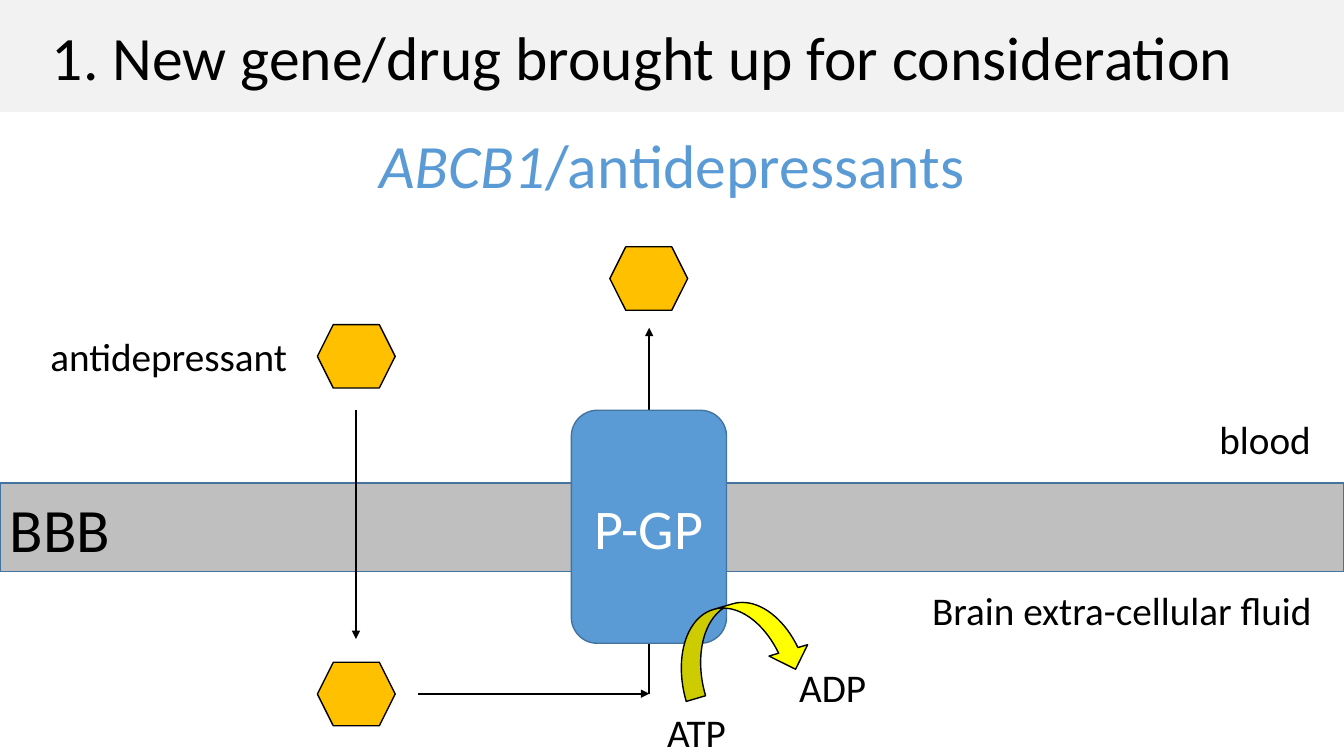
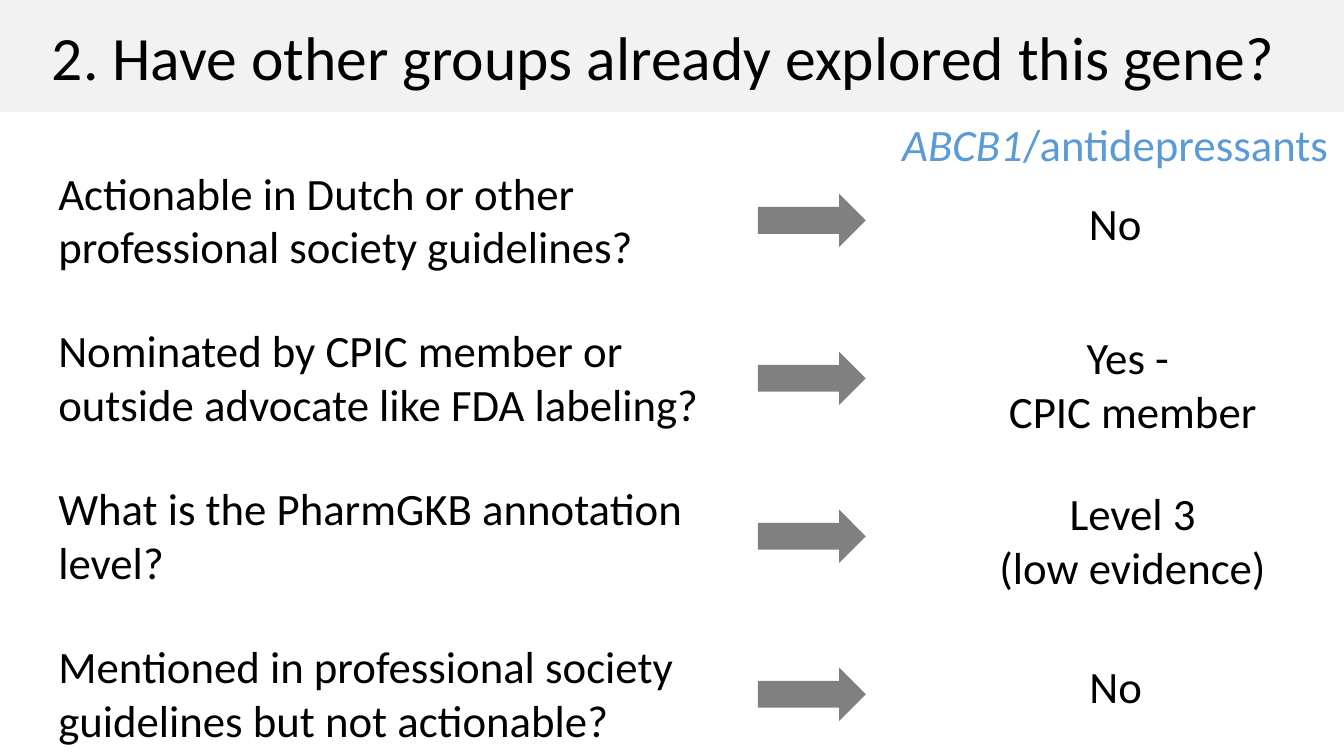
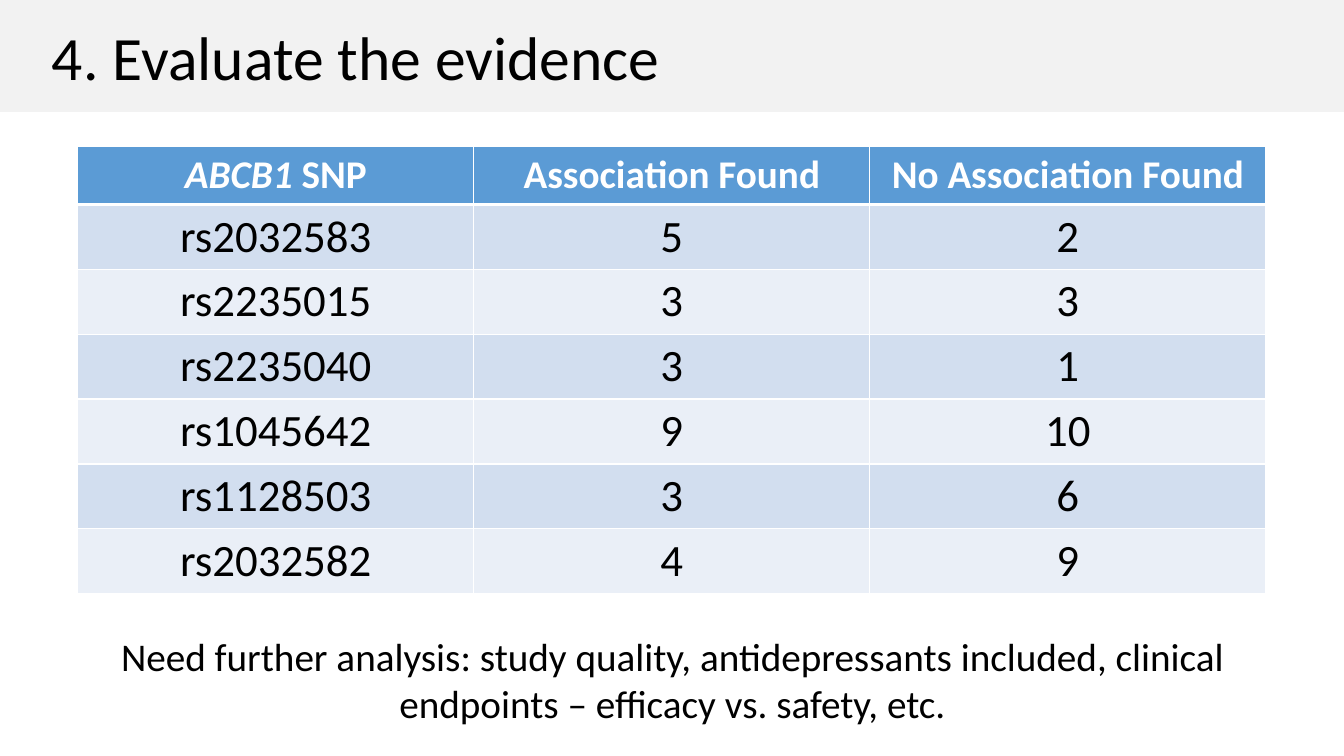
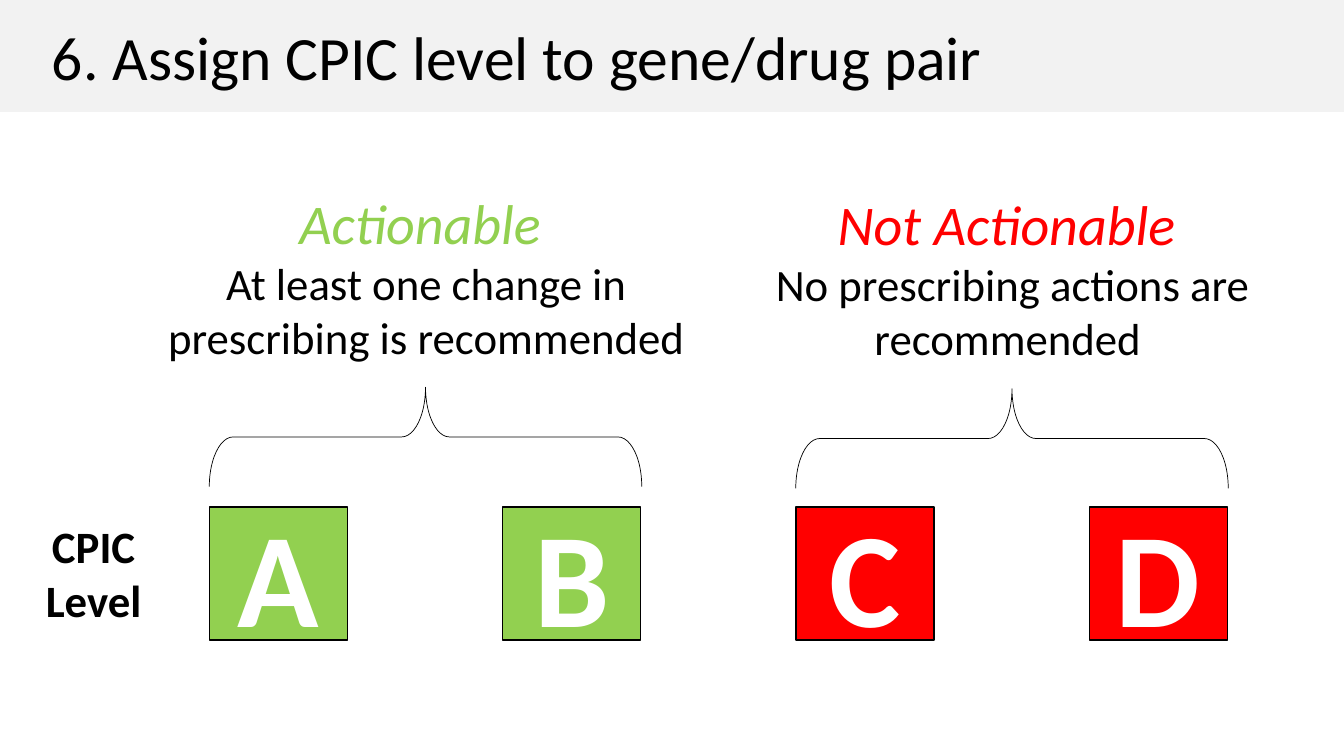
from lxml import etree
from pptx import Presentation
from pptx import util as u
from pptx.dml import color as c
from pptx.enum import shapes, text
from pptx.oxml import ns

Cm, Pt = u.Cm, u.Pt
KIND = shapes.MSO_SHAPE
LEFT, CENTER = text.PP_ALIGN.LEFT, text.PP_ALIGN.CENTER
BLACK, WHITE, GRAY = "000000", "FFFFFF", "808080"
BLUE, BLUE_EDGE = "5B9BD5", "43739E"
BAND, MEMBRANE = "F2F2F2", "BFBFBF"
GOLD, YELLOW, GREEN, RED = "FFC000", "FFFF00", "92D050", "FF0000"
ROW_FILLS = ["EAEFF7", "D2DEEF"]
WIDTH = 33.87


def rgb(value):
    return c.RGBColor.from_string(value)


def write(p, words, size=32, color=BLACK, bold=False, italic=False, align=LEFT):
    p.alignment = align
    r = p.add_run()
    r.text = words
    r.font.name = "Calibri"
    r.font.size = Pt(size)
    r.font.bold = bold
    r.font.italic = italic
    r.font.color.rgb = rgb(color)


prs = Presentation()
prs.slide_width, prs.slide_height = Cm(WIDTH), Cm(19.05)

titles = [
    "1. New gene/drug brought up for consideration",
    "2. Have other groups already explored this gene?",
    "4. Evaluate the evidence",
    "6. Assign CPIC level to gene/drug pair",
]
for title in titles:
    s = prs.slides.add_slide(prs.slide_layouts[5])
    sp = s.shapes.title
    sp.left, sp.top, sp.width, sp.height = Cm(0), Cm(0), Cm(WIDTH), Cm(2.82)
    sp.fill.solid()
    sp.fill.fore_color.rgb = rgb(BAND)
    tf = sp.text_frame
    tf.auto_size = text.MSO_AUTO_SIZE.NONE
    tf.vertical_anchor = text.MSO_ANCHOR.MIDDLE
    tf.margin_left = Cm(1.31)
    write(tf.paragraphs[0], title, size=44)

transport, groups, evidence, levels = prs.slides

for s, x, y, w, h, size, wrap in [
    (transport, 0, 3.07, WIDTH, 2.13, 44, True),
    (groups, 22.43, 2.82, 11.35, 1.63, 32, False),
]:
    tf = s.shapes.add_textbox(Cm(x), Cm(y), Cm(w), Cm(h)).text_frame
    tf.word_wrap = wrap
    p = tf.paragraphs[0]
    write(p, "ABCB1", size=size, color=BLUE, italic=True, align=CENTER)
    write(p, "/antidepressants", size=size, color=BLUE, align=CENTER)

s = transport
sp = s.shapes.add_shape(KIND.RECTANGLE, Cm(0), Cm(12.17), Cm(WIDTH), Cm(2.24))
sp.shadow.inherit = False
sp.fill.solid()
sp.fill.fore_color.rgb = rgb(MEMBRANE)
sp.line.color.rgb = rgb(BLUE_EDGE)
sp.line.width = Pt(1)
write(sp.text_frame.paragraphs[0], "BBB", size=44)

for x1, y1, x2, y2 in [
    (16.36, 17.5, 16.36, 8.26),
    (8.97, 10.34, 8.97, 16.1),
    (10.54, 17.48, 16.36, 17.48),
]:
    cn = s.shapes.add_connector(shapes.MSO_CONNECTOR.STRAIGHT, Cm(x1), Cm(y1), Cm(x2), Cm(y2))
    cn.line.color.rgb = rgb(BLACK)
    cn.line.width = Pt(1.5)
    etree.SubElement(cn.line._get_or_add_ln(), ns.qn("a:tailEnd"), type="triangle")
    etree.SubElement(cn._element.spPr, ns.qn("a:effectLst"))

for kind, x, y, w, h, fill, edge, turn, label in [
    (KIND.ROUNDED_RECTANGLE, 14.4, 10.34, 3.91, 5.87, BLUE, BLUE_EDGE, 0, "P-GP"),
    (KIND.HEXAGON, 8, 8.18, 1.96, 1.6, GOLD, BLACK, 0, ""),
    (KIND.HEXAGON, 8, 16.69, 1.96, 1.6, GOLD, BLACK, 0, ""),
    (KIND.HEXAGON, 15.37, 6.22, 1.96, 1.6, GOLD, BLACK, 0, ""),
    (KIND.CURVED_DOWN_ARROW, 16.94, 15.21, 3.38, 2.03, YELLOW, BLACK, 343.6, ""),
]:
    sp = s.shapes.add_shape(kind, Cm(x), Cm(y), Cm(w), Cm(h))
    sp.shadow.inherit = False
    sp.rotation = turn
    sp.fill.solid()
    sp.fill.fore_color.rgb = rgb(fill)
    sp.line.color.rgb = rgb(edge)
    sp.line.width = Pt(1)
    if label:
        write(sp.text_frame.paragraphs[0], label, size=40, color=WHITE, align=CENTER)

for label, x, y, w in [
    ("antidepressant", 1.02, 8.26, 6.55),
    ("blood", 30.48, 10.34, 2.84),
    ("Brain extra-cellular fluid", 23.24, 14.66, 10.19),
    ("ATP", 16.56, 17.73, 2.01),
    ("ADP", 19.89, 16.59, 2.24),
]:
    tf = s.shapes.add_textbox(Cm(x), Cm(y), Cm(w), Cm(1.45)).text_frame
    tf.word_wrap = False
    write(tf.paragraphs[0], label, size=28)

s = groups
pitch = 3.98
checks = [
    ("Actionable in Dutch or other professional society guidelines?",
     ["No"], 26.24, 4.8, 3.73),
    ("Nominated by CPIC member or outside advocate like FDA labeling?",
     ["Yes - ", "CPIC member"], 23.8, 8.18, 9.5),
    ("What is the PharmGKB annotation level?",
     ["Level 3", "(low evidence)"], 24.1, 12.12, 8.89),
    ("Mentioned in professional society guidelines but not actionable?",
     ["No"], 24.97, 16.48, 6.3),
]
for i, (question, answer, x, y, w) in enumerate(checks):
    tf = s.shapes.add_textbox(Cm(1.22), Cm(4.04 + pitch * i), Cm(16.84), Cm(3)).text_frame
    tf.word_wrap = True
    write(tf.paragraphs[0], question)

    sp = s.shapes.add_shape(KIND.RIGHT_ARROW, Cm(19.1), Cm(4.88 + pitch * i), Cm(2.72), Cm(1.35))
    sp.shadow.inherit = False
    sp.fill.solid()
    sp.fill.fore_color.rgb = rgb(GRAY)
    sp.line.fill.background()

    tf = s.shapes.add_textbox(Cm(x), Cm(y), Cm(w), Cm(0.25 + 1.38 * len(answer))).text_frame
    tf.word_wrap = True
    for j, words in enumerate(answer):
        p = tf.add_paragraph() if j else tf.paragraphs[0]
        write(p, words, align=CENTER)

s = evidence
rows = [
    ("ABCB1 SNP", "Association Found", "No Association Found"),
    ("rs2032583", "5", "2"),
    ("rs2235015", "3", "3"),
    ("rs2235040", "3", "1"),
    ("rs1045642", "9", "10"),
    ("rs1128503", "3", "6"),
    ("rs2032582", "4", "9"),
]
table = s.shapes.add_table(len(rows), 3, Cm(1.96), Cm(3.68), Cm(29.94), Cm(11.25)).table
for i, row in enumerate(rows):
    table.rows[i].height = Cm(1.63 if i else 1.47)
    for j, words in enumerate(row):
        cell = table.cell(i, j)
        cell.fill.solid()
        cell.fill.fore_color.rgb = rgb(ROW_FILLS[i % 2] if i else BLUE)
        p = cell.text_frame.paragraphs[0]
        if i:
            write(p, words, align=CENTER)
        else:
            gene, mark, rest = words.rpartition("ABCB1 ")
            if mark:
                write(p, mark, size=28, color=WHITE, bold=True, italic=True, align=CENTER)
            write(p, rest, size=28, color=WHITE, bold=True, align=CENTER)
        for k, side in enumerate(["lnL", "lnR", "lnT", "lnB"]):
            thick = (i, side) in [(0, "lnB"), (1, "lnT")]
            ln = etree.Element(ns.qn("a:" + side), w=str(Pt(3 if thick else 1)))
            fill = etree.SubElement(ln, ns.qn("a:solidFill"))
            etree.SubElement(fill, ns.qn("a:srgbClr"), val=WHITE)
            cell._tc.get_or_add_tcPr().insert(k, ln)

tf = s.shapes.add_textbox(Cm(2.67), Cm(15.8), Cm(28.55), Cm(2.64)).text_frame
tf.word_wrap = True
write(tf.paragraphs[0], "Need further analysis: study quality, antidepressants included, "
      "clinical endpoints – efficacy vs. safety, etc.", size=28, align=CENTER)

s = levels
step = 7.39
for i, (heading, meaning, letters, color) in enumerate([
    ("Actionable ", "At least one change in prescribing is recommended ", "AB", GREEN),
    ("Not Actionable ", "No prescribing actions are recommended ", "CD", RED),
]):
    x, y = 2 * step * i, 0.04 * i
    for j, letter in enumerate(letters):
        sp = s.shapes.add_shape(KIND.RECTANGLE, Cm(5.28 + x + step * j), Cm(12.78), Cm(3.48), Cm(3.35))
        sp.shadow.inherit = False
        sp.fill.solid()
        sp.fill.fore_color.rgb = rgb(color)
        sp.line.color.rgb = rgb(BLACK)
        sp.line.width = Pt(1)
        write(sp.text_frame.paragraphs[0], letter, size=96, color=WHITE, bold=True, align=CENTER)

    sp = s.shapes.add_shape(KIND.RIGHT_BRACE, Cm(9.47 + x), Cm(5.56 + y), Cm(2.51), Cm(10.9))
    sp.shadow.inherit = False
    sp.rotation = 270
    sp.adjustments[0] = 0.24
    sp.fill.background()
    sp.line.color.rgb = rgb(BLACK)
    sp.line.width = Pt(0.5)

    tf = s.shapes.add_textbox(Cm(3.94 + x), Cm(4.62 + y), Cm(13.61), Cm(4.7)).text_frame
    tf.word_wrap = True
    write(tf.paragraphs[0], heading, size=40, color=color, italic=True, align=CENTER)
    write(tf.add_paragraph(), meaning, align=CENTER)

tf = s.shapes.add_textbox(Cm(0.81), Cm(12.95), Cm(3.1), Cm(3)).text_frame
tf.word_wrap = True
write(tf.paragraphs[0], "CPIC Level", bold=True, align=CENTER)

prs.save("out.pptx")
